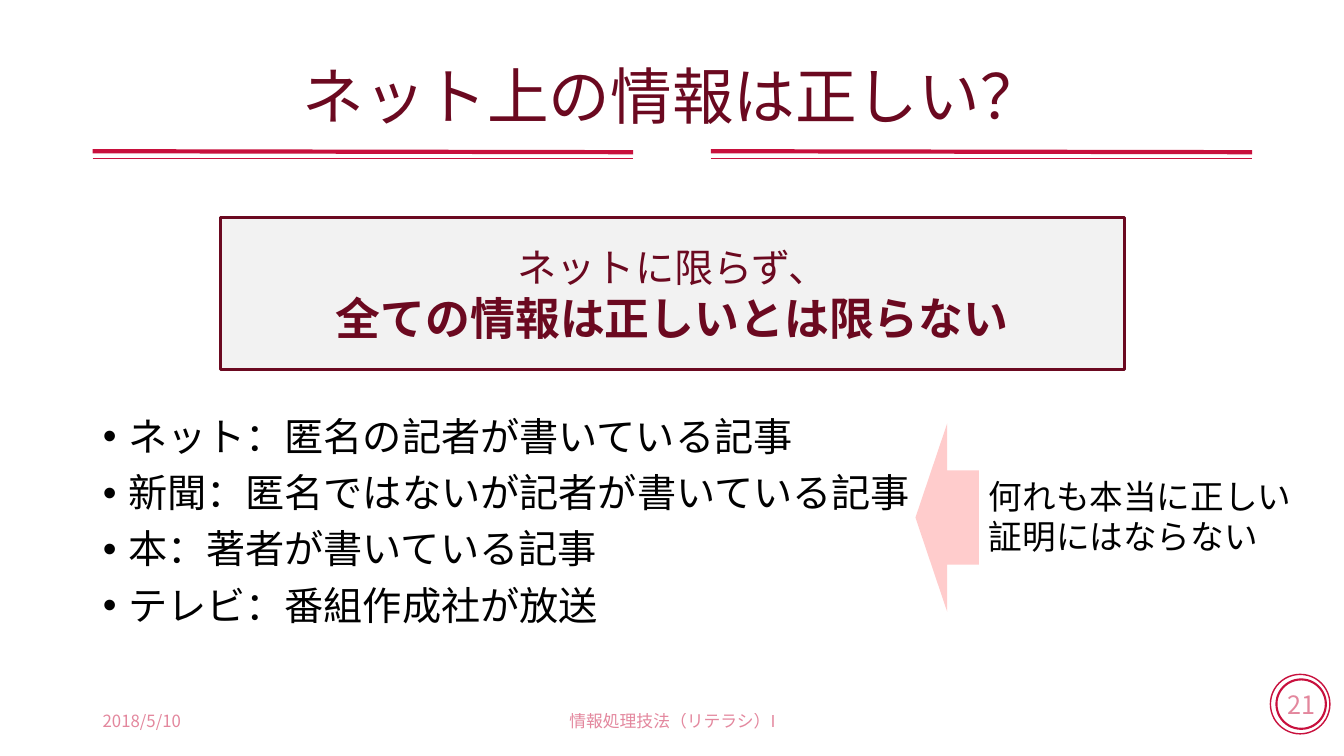
from lxml import etree
from pptx import Presentation
from pptx.dml.color import RGBColor
from pptx.enum.shapes import MSO_CONNECTOR, MSO_SHAPE
from pptx.enum.text import MSO_ANCHOR, MSO_AUTO_SIZE, PP_ALIGN
from pptx.oxml.ns import qn
from pptx.util import Pt

PX = 9144  # 100 px to the inch
FONT = "Noto Sans CJK JP"
CRIMSON, WINE, BLACK = "C8103D", "6B0920", "000000"
LEFT, CENTER = PP_ALIGN.LEFT, PP_ALIGN.CENTER
TOP, MIDDLE = MSO_ANCHOR.TOP, MSO_ANCHOR.MIDDLE
STRAIGHT, OVAL = MSO_CONNECTOR.STRAIGHT, MSO_SHAPE.OVAL


def px(*lengths):
    return [length * PX for length in lengths]


def write(shape, lines, sizes, color=BLACK, align=LEFT, anchor=TOP, wrap=True,
          spacing=1.0, before=0, bullet=False, bold_line=None, alpha=None,
          fit=MSO_AUTO_SIZE.NONE):
    """Fill a shape with one paragraph per line; sizes holds one point size per line."""
    frame = shape.text_frame
    frame.word_wrap, frame.auto_size, frame.vertical_anchor = wrap, fit, anchor
    for i, (line, size) in enumerate(zip(lines, sizes)):
        paragraph = frame.paragraphs[0] if i == 0 else frame.add_paragraph()
        paragraph.alignment, paragraph.line_spacing = align, spacing
        paragraph.space_before = Pt(before if i else 0)
        if bullet:
            properties = paragraph._p.get_or_add_pPr()
            properties.set("marL", str(25 * PX))
            properties.set("indent", str(-25 * PX))
            etree.SubElement(properties, qn("a:buFont"), typeface="Arial")
            etree.SubElement(properties, qn("a:buChar"), char="•")
        run = paragraph.add_run()
        run.text = line
        font = run.font
        font.size, font.bold, font.name = Pt(size), i == bold_line, FONT
        font.color.rgb = RGBColor.from_string(color)
        run_properties = run._r.get_or_add_rPr()
        latin = run_properties.find(qn("a:latin"))
        latin.addnext(latin.makeelement(qn("a:ea"), {"typeface": FONT}))
        if alpha is not None:
            tint = run_properties.find(".//" + qn("a:srgbClr"))
            etree.SubElement(tint, qn("a:alpha"), val=str(alpha * 1000))


presentation = Presentation()
presentation.slide_width, presentation.slide_height = px(1333, 750)
slide = presentation.slides.add_slide(presentation.slide_layouts[1])
shapes = slide.shapes

# Title and list
title, media_list = slide.placeholders
title.left, title.top, title.width, title.height = px(92, 40, 1150, 117)
write(title, ["ネット上の情報は正しい？"], [44], color=WINE, align=CENTER,
      anchor=MIDDLE, spacing=0.9)
media_list.left, media_list.top, media_list.width, media_list.height = px(92, 409, 1150, 266)
write(media_list, [
    "ネット：匿名の記者が書いている記事",
    "新聞：匿名ではないが記者が書いている記事",
    "本：著者が書いている記事",
    "テレビ：番組作成社が放送",
], [28] * 4, spacing=0.9, before=10, bullet=True)

# Double rules under the title
for start, end in ((92, 628), (705, 1242)):
    for y1, y2, weight in ((150, 151, 3), (157, 157, 1)):
        rule = shapes.add_connector(STRAIGHT, *px(start, y1, end, y2))
        rule.line.color.rgb = RGBColor.from_string(CRIMSON)
        rule.line.width = Pt(weight)
        etree.SubElement(rule._element.spPr, qn("a:effectLst"))

# Page number in two rings
for x, y, diameter, weight in ((1260, 669, 59, 1), (1266, 674, 49, 1.5)):
    ring = shapes.add_shape(OVAL, *px(x, y, diameter, diameter))
    ring.shadow.inherit = False
    ring.fill.background()
    ring.line.color.rgb = RGBColor.from_string(CRIMSON)
    ring.line.width = Pt(weight)
write(ring, ["21"], [18], color=CRIMSON, align=CENTER, anchor=MIDDLE,
      wrap=False, alpha=50)

# Date and course name
for x, width, footer, align in (
    (92, 300, "2018/5/10", LEFT),
    (442, 450, "情報処理技法（リテラシ）I", CENTER),
):
    write(shapes.add_textbox(*px(x, 695, width, 40)), [footer], [12],
          color=CRIMSON, align=align, anchor=MIDDLE, alpha=50)

# Key message
message = shapes.add_shape(MSO_SHAPE.RECTANGLE, *px(219, 216, 896, 151))
message.shadow.inherit = False
message.fill.solid()
message.fill.fore_color.rgb = RGBColor.from_string("F2F2F2")
message.line.color.rgb = RGBColor.from_string(WINE)
message.line.width = Pt(2.25)
write(message, ["ネットに限らず、", "全ての情報は正しいとは限らない"], [28, 32],
      color=WINE, align=CENTER, anchor=MIDDLE, bold_line=1)

# Remark pointing at the list
arrow = shapes.add_shape(MSO_SHAPE.LEFT_ARROW, *px(908, 420, 63, 187))
arrow.shadow.inherit = False
arrow.fill.solid()
arrow.fill.fore_color.rgb = RGBColor.from_string("FFCCCC")
arrow.line.fill.background()
write(shapes.add_textbox(*px(971, 467, 344, 91)),
      ["何れも本当に正しい", "証明にはならない"], [24, 24],
      fit=MSO_AUTO_SIZE.SHAPE_TO_FIT_TEXT)

presentation.save("out.pptx")
